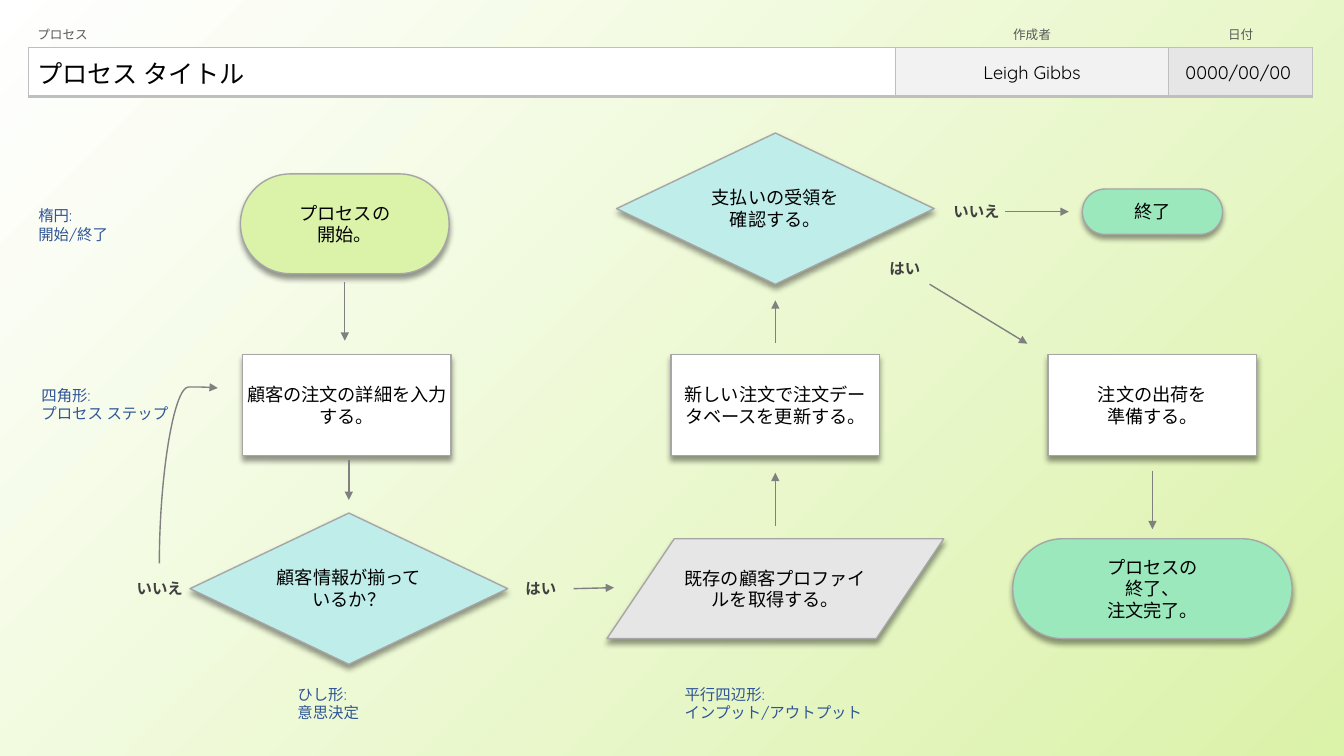
from collections import namedtuple

from lxml import etree
from pptx import Presentation, oxml
from pptx import util as u
from pptx.dml.color import RGBColor
from pptx.enum import shapes, text
from pptx.oxml.ns import qn

Box = namedtuple("Box", "left top width height")
FONT = "Quicksand"
COLORS = {
    "white": "FFFFFF", "lime": "DBF2A9", "mint": "9CE8BD", "aqua": "BFEEEA",
    "gray": "E7E6E6", "author": "F2F2F2", "date": "E6E6E6",
    "border": "BFBFBF", "outline": "A6A6A6", "arrow": "808080",
    "black": "000000", "caption": "595959", "answer": "404040", "legend": "2F5597",
}
KINDS = shapes.MSO_SHAPE
CENTER, LEFT = text.PP_ALIGN.CENTER, text.PP_ALIGN.LEFT
NO_TABLE_STYLE = "{2D5ABB26-0587-4C30-8999-92F81FD0307C}"


def rgb(name):
    return RGBColor.from_string(COLORS[name])


def add_xml(parent, tag, **attributes):
    return etree.SubElement(parent, qn(tag), attributes)


def write(frame, paragraphs, size, color, align=CENTER, bold=False):
    """Fill a text frame, one paragraph per string."""
    for index, words in enumerate(paragraphs):
        para = frame.paragraphs[0] if index == 0 else frame.add_paragraph()
        para.text = words
        para.alignment = align
        para.font.name = FONT
        para.font.size = u.Pt(size)
        para.font.bold = bold
        para.font.color.rgb = rgb(color)


def set_frame(frame, margin):
    frame.word_wrap = True
    frame.vertical_anchor = text.MSO_ANCHOR.MIDDLE
    frame.margin_left = frame.margin_right = u.Inches(margin)
    frame.margin_top = frame.margin_bottom = u.Inches(margin)


def paint_background(page):
    fill = page.background.fill
    fill.gradient()
    fill.gradient_angle = 315
    for stop, color, position in zip(fill.gradient_stops, ("white", "lime"), (0, 1)):
        stop.color.rgb = rgb(color)
        stop.position = position


# Header table
def add_border(cell, side, width):
    line = add_xml(cell._tc.get_or_add_tcPr(), f"a:ln{side}", w=str(u.Pt(width)))
    add_xml(add_xml(line, "a:solidFill"), "a:srgbClr", val=COLORS["border"])


def add_header(page, box):
    columns = [  # width, caption, value, size, fill, alignment, margins
        (8.6, "プロセス", "プロセス タイトル", 18, "white", LEFT, 0.09),
        (2.71, "作成者", "Leigh Gibbs", 13, "author", CENTER, 0.01),
        (1.43, "日付", "0000/00/00 ", 13, "date", CENTER, 0.01),
    ]
    table = page.shapes.add_table(2, 3, *map(u.Inches, box)).table
    table.first_row = table.horz_banding = False
    table._tbl.tblPr.find(qn("a:tableStyleId")).text = NO_TABLE_STYLE
    table.rows[0].height, table.rows[1].height = u.Inches(0.28), u.Inches(0.49)
    for index, (width, caption, value, size, fill, align, margin) in enumerate(columns):
        table.columns[index].width = u.Inches(width)
        rows = [(caption, 9, "caption"), (value, size, "black")]
        for row, (words, points, color) in enumerate(rows):
            cell = table.cell(row, index)
            cell.vertical_anchor = text.MSO_ANCHOR.MIDDLE
            cell.margin_left = u.Inches(margin)
            cell.margin_right = cell.margin_top = u.Inches(0.01)
            cell.margin_bottom = 0
            write(cell.text_frame, [words], points, color, align)
            if row == 0:
                add_border(cell, "B", 1)
                cell.fill.background()
            else:
                for side, weight in zip("LRTB", (1, 1, 1, 2.25)):
                    add_border(cell, side, weight)
                cell.fill.solid()
                cell.fill.fore_color.rgb = rgb(fill)


# Flowchart parts
def add_node(page, kind, center, size, fill, paragraphs):
    (x, y), (width, height) = center, size
    corner = (x - width / 2, y - height / 2)
    node = page.shapes.add_shape(kind, *map(u.Inches, corner + size))
    if kind == KINDS.ROUNDED_RECTANGLE:
        node.adjustments[0] = 0.5
    node.fill.solid()
    node.fill.fore_color.rgb = rgb(fill)
    node.line.color.rgb = rgb("outline")
    node.line.width = u.Pt(1)
    node.shadow.inherit = False
    effects = node._element.spPr.find(qn("a:effectLst"))
    shadow = add_xml(effects, "a:outerShdw", blurRad=str(u.Pt(4)), dist=str(u.Pt(3)),
                     dir="5400000", algn="t", rotWithShape="0")
    add_xml(add_xml(shadow, "a:srgbClr", val=COLORS["black"]), "a:alpha", val="40000")
    set_frame(node.text_frame, 0 if kind == KINDS.FLOWCHART_DECISION else 0.02)
    write(node.text_frame, paragraphs, 13, "black")


def add_arrow(page, start, end, kind=shapes.MSO_CONNECTOR.STRAIGHT):
    arrow = page.shapes.add_connector(kind, *map(u.Inches, start + end))
    arrow.line.color.rgb = rgb("arrow")
    arrow.line.width = u.Pt(1)
    add_xml(arrow.line._get_or_add_ln(), "a:tailEnd", type="triangle")
    add_xml(arrow._element.spPr, "a:effectLst")
    return arrow


def add_loop(page, start, end):
    """Curved arrow that leaves upwards and arrives to the right."""
    x, y = (start[0] + end[0]) / 2, (start[1] + end[1]) / 2
    half_width, half_height = (start[1] - end[1]) / 2, (end[0] - start[0]) / 2
    loop = add_arrow(page, (x + half_width, y + half_height),
                     (x - half_width, y - half_height), shapes.MSO_CONNECTOR.CURVE)
    properties = loop._element.spPr
    properties.find(qn("a:xfrm")).set("rot", "5400000")
    guides = properties.find(qn("a:prstGeom")).find(qn("a:avLst"))
    add_xml(guides, "a:gd", name="adj1", fmla="val 100600")


def add_label(page, box, paragraphs, color, align=LEFT, bold=False):
    label = page.shapes.add_textbox(*map(u.Inches, box))
    set_frame(label.text_frame, 0.02)
    write(label.text_frame, paragraphs, 11, color, align, bold)


def add_flowchart(page, box):
    def at(x, y):
        return box.left + x, box.top + y

    first, second, third = 3.08, 7.33, 11.07
    top, middle, bottom = 0.75, 2.7, 4.52
    step, decision = (2.07, 1.0), (3.15, 1.5)
    nodes = [
        (KINDS.ROUNDED_RECTANGLE, first - 0.02, 0.9, (2.07, 0.99), "lime",
         ["プロセスの", "開始。"]),
        (KINDS.FLOWCHART_PROCESS, first, middle, step, "white",
         ["顧客の注文の詳細を入力する。"]),
        (KINDS.FLOWCHART_DECISION, first + 0.02, bottom, decision, "aqua",
         ["顧客情報が揃っているか？"]),
        (KINDS.FLOWCHART_DATA, second, bottom, (3.34, 0.99), "gray",
         ["既存の顧客プロファイルを取得する。"]),
        (KINDS.FLOWCHART_PROCESS, second, middle, step, "white",
         ["新しい注文で注文デー\vタベースを更新する。"]),
        (KINDS.FLOWCHART_DECISION, second, top, decision, "aqua",
         ["支払いの受領を\v確認する。"]),
        (KINDS.ROUNDED_RECTANGLE, third, 0.78, (1.39, 0.45), "mint", ["終了"]),
        (KINDS.FLOWCHART_PROCESS, third, middle, step, "white",
         ["注文の出荷を", "準備する。"]),
        (KINDS.ROUNDED_RECTANGLE, third, bottom, (2.77, 0.99), "mint",
         ["プロセスの", "終了、\v注文完了。"]),
    ]
    for kind, x, y, size, fill, paragraphs in nodes:
        add_node(page, kind, at(x, y), size, fill, paragraphs)

    # Vertical arrows: x, from y, to y
    for x, start, end in [(first - 0.02, 1.48, 2.06), (first + 0.02, 3.24, 3.64),
                          (second, 3.9, 3.37), (second, 2.08, 1.66),
                          (third, 3.35, 3.93)]:
        add_arrow(page, at(x, start), at(x, end))
    # Branch arrows
    add_arrow(page, at(5.33, bottom), at(5.73, bottom - 0.01))
    add_arrow(page, at(8.86, 1.5), at(9.83, 2.09))
    add_arrow(page, at(9.61, 0.78), at(10.24, 0.78))
    add_loop(page, at(1.22, 4.27), at(1.8, 2.53))

    # Answers: left, top, width
    for x, y, width, answer in [(0.81, 4.27, 0.83, "いいえ"), (4.61, 4.27, 0.79, "はい"),
                                (8.22, 1.09, 0.79, "はい"), (8.93, 0.53, 0.79, "いいえ")]:
        add_label(page, at(x, y) + (width, 0.5), [answer], "answer", CENTER, True)

    # Legend: left, top, width
    for x, y, width, name, meaning in [
            (0, 0.66, 1.73, "楕円:", "開始/終了"),
            (0.03, 2.44, 1.38, "四角形:", "プロセス ステップ"),
            (2.57, 5.41, 1.16, "ひし形:", "意思決定"),
            (6.41, 5.41, 1.84, "平行四辺形:", "インプット/アウトプット")]:
        add_label(page, at(x, y) + (width, 0.5), [name, meaning], "legend")


def main():
    deck = Presentation()
    deck.slide_width, deck.slide_height = u.Inches(13.33), u.Inches(7.5)
    page = deck.slides.add_slide(deck.slide_layouts[6])
    paint_background(page)
    add_header(page, Box(0.28, 0.19, 12.74, 0.77))
    add_flowchart(page, Box(0.36, 1.32, 12.46, 5.91))
    deck.save("out.pptx")


if __name__ == "__main__":
    main()
